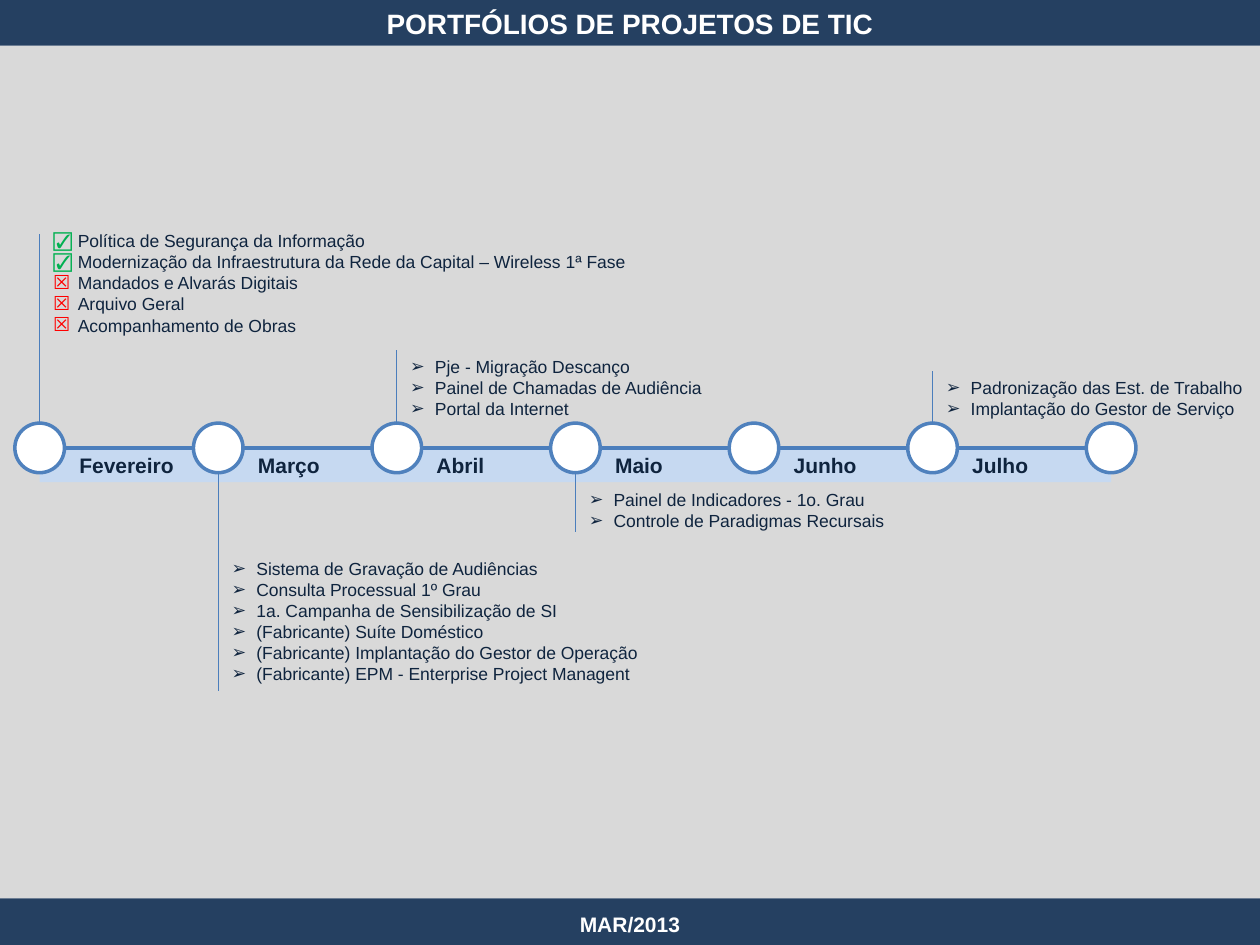
from lxml.etree import SubElement
from pptx import Presentation
from pptx.dml.color import RGBColor
from pptx.enum.shapes import MSO_CONNECTOR, MSO_SHAPE
from pptx.enum.text import MSO_ANCHOR, PP_ALIGN
from pptx.oxml.ns import qn
from pptx.util import Cm, Pt

COLORS = {
    "navy": "254061", "panel": "D9D9D9", "band": "C6D9F1", "white": "FFFFFF",
    "ring": "4F81BD", "line": "4B7EBC", "text": "0F243E",
    "done": "00B050", "late": "FF0000",
}
WIDTH, HEIGHT = 25.4, 19.05
HEADER, FOOTER_TOP = 0.92, 18.11
AXIS, DIAMETER, PITCH, FIRST = 9.03, 1.0, 3.6, 0.8
RADIUS = DIAMETER / 2
BAND = 0.69
MONTHS = ["Fevereiro", "Março", "Abril", "Maio", "Junho", "Julho"]

DONE, LATE, ARROW = ("☑", "done"), ("☒", "late"), ("➢", None)

# Month index, top, width and height of the list, end of its stem, items
LISTS = [
    (0, 4.52, 12.07, 2.54, 4.72, [
        (DONE, "Política de Segurança da Informação"),
        (DONE, "Modernização da Infraestrutura da Rede da Capital – Wireless 1ª Fase"),
        (LATE, "Mandados e Alvarás Digitais"),
        (LATE, "Arquivo Geral"),
        (LATE, "Acompanhamento de Obras")]),
    (1, 11.13, 11.79, 2.79, 13.92, [
        (ARROW, "Sistema de Gravação de Audiências"),
        (ARROW, "Consulta Processual 1º Grau"),
        (ARROW, "1a. Campanha de Sensibilização de SI"),
        (ARROW, "(Fabricante) Suíte Doméstico"),
        (ARROW, "(Fabricante) Implantação do Gestor de Operação"),
        (ARROW, "(Fabricante) EPM - Enterprise Project Managent")]),
    (2, 7.06, 7.49, 1.27, 7.06, [
        (ARROW, "Pje - Migração Descanço"),
        (ARROW, "Painel de Chamadas de Audiência"),
        (ARROW, "Portal da Internet")]),
    (3, 9.73, 8.33, 1.27, 10.72, [
        (ARROW, "Painel de Indicadores - 1o. Grau"),
        (ARROW, "Controle de Paradigmas Recursais")]),
    (5, 7.47, 6.58, 1.27, 7.47, [
        (ARROW, "Padronização das Est. de Trabalho"),
        (ARROW, "Implantação do Gestor de Serviço")]),
]


def color(name):
    return RGBColor.from_string(COLORS[name])


class TimelinePage:
    font = "Arial"

    def __init__(self, page):
        self.page = page

    def shape(self, kind, left, top, width, height, fill, line=None):
        shape = self.page.shapes.add_shape(
            kind, Cm(left), Cm(top), Cm(width), Cm(height))
        shape.shadow.inherit = False
        shape.fill.solid()
        shape.fill.fore_color.rgb = color(fill)
        if line:
            shape.line.color.rgb = color(line)
            shape.line.width = Pt(2)
        else:
            shape.line.fill.background()

    def line(self, x1, y1, x2, y2, weight):
        line = self.page.shapes.add_connector(
            MSO_CONNECTOR.STRAIGHT, Cm(x1), Cm(y1), Cm(x2), Cm(y2))
        line.line.color.rgb = color("line")
        line.line.width = Pt(weight)
        SubElement(line._element.spPr, qn("a:effectLst"))

    def frame(self, left, top, width, height, anchor):
        box = self.page.shapes.add_textbox(Cm(left), Cm(top), Cm(width), Cm(height))
        box.text_frame.word_wrap = True
        box.text_frame.vertical_anchor = anchor
        return box.text_frame

    def span(self, para, text, size, ink, bold=False):
        span = para.add_run()
        span.text = text
        span.font.name = self.font
        span.font.size = Pt(size)
        span.font.bold = bold
        span.font.color.rgb = color(ink)

    def label(self, text, left, top, width, height, size, ink,
              align=PP_ALIGN.LEFT, anchor=MSO_ANCHOR.MIDDLE):
        para = self.frame(left, top, width, height, anchor).paragraphs[0]
        para.alignment = align
        self.span(para, text, size, ink, bold=True)

    def bullet(self, para, mark, ink):
        props = para._p.get_or_add_pPr()
        props.set("marL", str(Cm(0.5)))
        props.set("indent", str(Cm(-0.5)))
        if ink:
            holder = SubElement(props, qn("a:buClr"))
            SubElement(holder, qn("a:srgbClr"), val=COLORS[ink])
            SubElement(props, qn("a:buSzPct"), val="110000")
        SubElement(props, qn("a:buFont"), typeface=self.font)
        SubElement(props, qn("a:buChar"), char=mark)

    def bullets(self, left, top, width, height, items):
        frame = self.frame(left, top, width, height, MSO_ANCHOR.TOP)
        for index, ((mark, ink), text) in enumerate(items):
            para = frame.add_paragraph() if index else frame.paragraphs[0]
            self.bullet(para, mark, ink)
            self.span(para, text, 10, "text")


def main():
    deck = Presentation()
    deck.slide_width, deck.slide_height = Cm(WIDTH), Cm(HEIGHT)
    page = TimelinePage(deck.slides.add_slide(deck.slide_layouts[6]))
    centers = [FIRST + PITCH * index for index in range(len(MONTHS) + 1)]

    # Panel, header and footer
    rect = MSO_SHAPE.RECTANGLE
    page.shape(rect, 0, HEADER, WIDTH, FOOTER_TOP - HEADER, "panel")
    page.shape(rect, 0, FOOTER_TOP, WIDTH, HEIGHT - FOOTER_TOP, "navy")
    page.shape(rect, 0, 0, WIDTH, HEADER, "navy")
    page.label("MAR/2013", 0, 18.14, WIDTH, 0.99, 12, "white", PP_ALIGN.CENTER)
    page.label("PORTFÓLIOS DE PROJETOS DE TIC", 0, 0, WIDTH, HEADER, 16, "white",
               PP_ALIGN.CENTER, MSO_ANCHOR.TOP)

    # Month band, segments and names
    page.shape(rect, FIRST, AXIS, centers[-1] - FIRST, BAND, "band")
    for month, start, end in zip(MONTHS, centers, centers[1:]):
        page.line(start + RADIUS, AXIS, end - RADIUS, AXIS, 2.25)
        page.label(month, start + RADIUS + 0.05, AXIS, 2.57, BAND, 12, "text")

    # Milestone circles
    for center in centers:
        page.shape(MSO_SHAPE.OVAL, center - RADIUS, AXIS - RADIUS,
                   DIAMETER, DIAMETER, "white", "ring")

    # Project lists with their stems
    for month, top, width, height, stem_end, items in LISTS:
        center = centers[month]
        edge = AXIS - RADIUS if stem_end < AXIS else AXIS + RADIUS
        page.line(center, edge, center, stem_end, 0.75)
        page.bullets(center + 0.02, top, width, height, items)

    deck.save("out.pptx")


if __name__ == "__main__":
    main()
